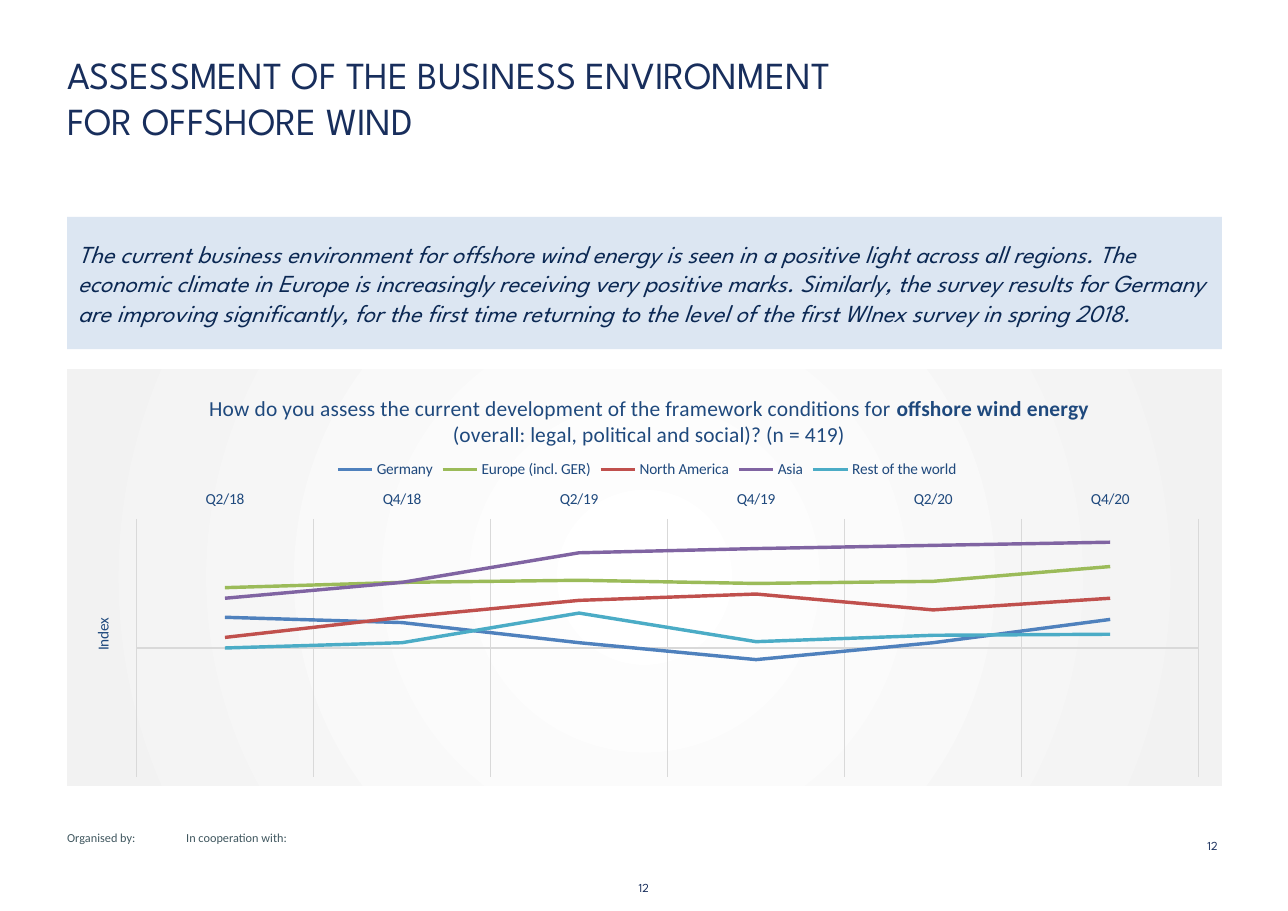
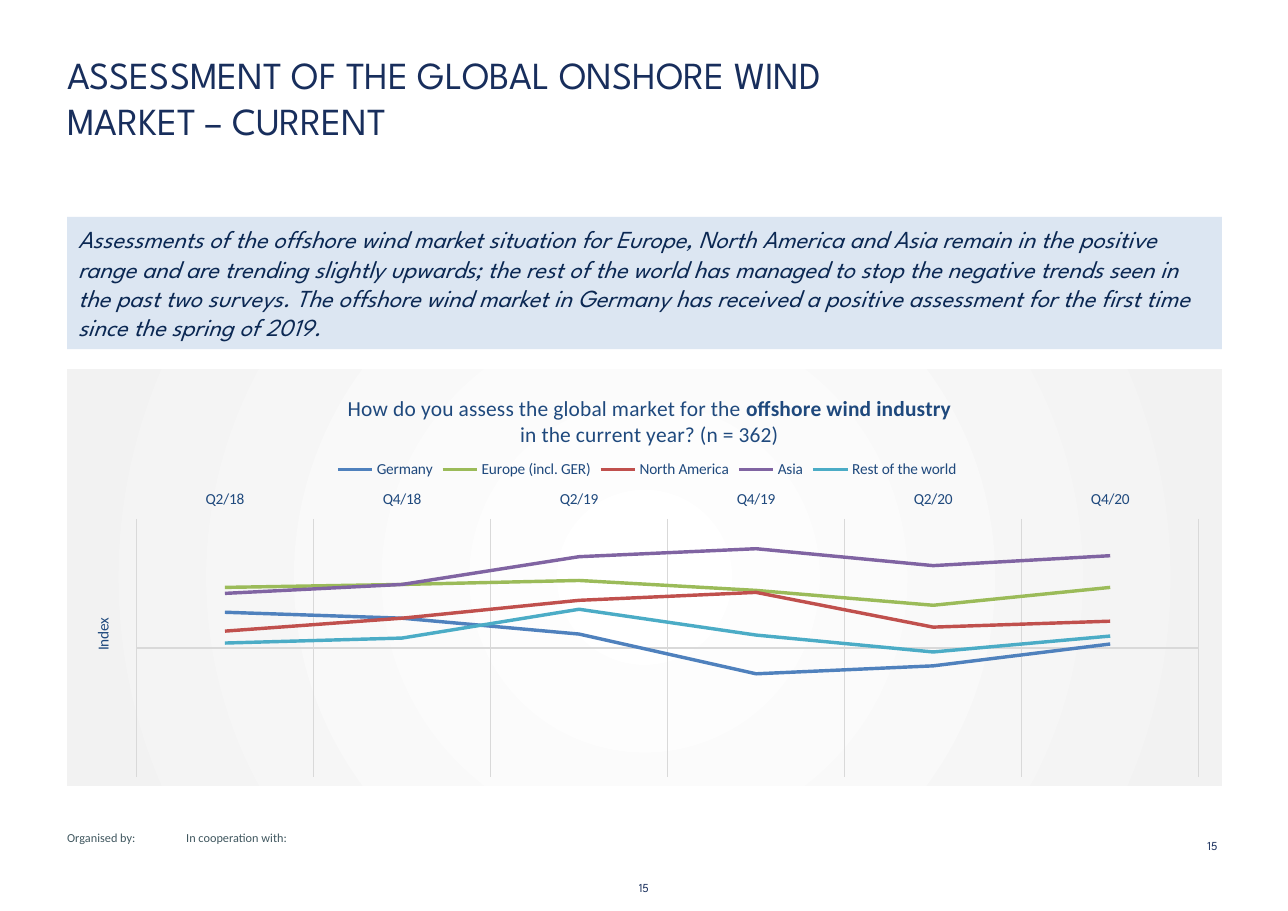
from dataclasses import dataclass

from lxml import etree
from pptx import Presentation
from pptx.chart import data as chart_data
from pptx.dml.color import RGBColor
from pptx.enum import chart as chart_enum, shapes, text
from pptx.oxml import parse_xml
from pptx.oxml.ns import nsdecls, qn
from pptx.util import Pt

COLORS = {
    "title": "182E5C",
    "banner": "DCE6F2",
    "banner_text": "0B2853",
    "footer": "40575F",
    "chart_text": "1F497D",
    "grid": "D9D9D9",
    "glow": "FFFFFF",
    "edge": "F2F2F2",
}
REGION_COLORS = {
    "Germany": "4F81BD",
    "Europe (incl. GER)": "9BBB59",
    "North America": "C0504D",
    "Asia": "8064A2",
    "Rest of the world": "4BACC6",
}
QUARTERS = ["Q2/18", "Q4/18", "Q2/19", "Q4/19", "Q2/20", "Q4/20"]
HEADING_FONT = "League Spartan"
BODY_FONT = "Calibri"
LEFT, CONTENT_WIDTH = 43.9, 754.6


@dataclass
class Style:
    size: float
    font: str
    color: str
    italic: bool = False
    bold: bool = False


@dataclass
class Box:
    left: float
    top: float
    width: float
    height: float

    def points(self) -> tuple:
        return Pt(self.left), Pt(self.top), Pt(self.width), Pt(self.height)


@dataclass
class Survey:
    page: int
    heading: str
    summary: str
    question: str
    topic: str
    question_end: str
    title_left: float
    limit: int
    values: list[list[int]]


TITLE_STYLE = Style(25, HEADING_FONT, COLORS["title"])
SUMMARY_STYLE = Style(16, HEADING_FONT, COLORS["banner_text"], italic=True)
PAGE_STYLE = Style(8, HEADING_FONT, COLORS["title"])
FOOTER_STYLE = Style(8, BODY_FONT, COLORS["footer"])
QUESTION_STYLE = Style(14, BODY_FONT, COLORS["chart_text"])
TOPIC_STYLE = Style(14, BODY_FONT, COLORS["chart_text"], bold=True)
LABEL_STYLE = Style(10, BODY_FONT, COLORS["chart_text"])

SURVEYS = [
    Survey(
        12,
        "ASSESSMENT OF THE BUSINESS ENVIRONMENT FOR OFFSHORE WIND",
        "The current business environment for offshore wind energy is seen in a positive "
        "light across all regions. The economic climate in Europe is increasingly receiving "
        "very positive marks. Similarly, the survey results for Germany are improving "
        "significantly, for the first time returning to the level of the first WInex survey "
        "in spring 2018.",
        "How do you assess the current development of the framework conditions for ",
        "offshore wind energy",
        "(overall: legal, political and social)? (n = 419)",
        0.12,
        122,
        [
            [29, 24, 5, -11, 5, 27],
            [57, 62, 64, 61, 63, 77],
            [10, 29, 45, 51, 36, 47],
            [47, 62, 90, 94, 97, 100],
            [0, 5, 33, 6, 12, 13],
        ],
    ),
    Survey(
        15,
        "ASSESSMENT OF THE GLOBAL ONSHORE WIND MARKET – CURRENT",
        "Assessments of the offshore wind market situation for Europe, North America and "
        "Asia remain in the positive range and are trending slightly upwards; the rest of "
        "the world has managed to stop the negative trends seen in the past two surveys. "
        "The offshore wind market in Germany has received a positive assessment for the "
        "first time since the spring of 2019.",
        "How do you assess the global market for the ",
        "offshore wind industry",
        "in the current year? (n = 362)",
        0.24,
        130,
        [
            [36, 30, 14, -26, -18, 4],
            [61, 64, 68, 58, 43, 61],
            [17, 30, 48, 56, 21, 27],
            [55, 64, 92, 100, 83, 93],
            [5, 10, 39, 13, -4, 12],
        ],
    ),
]


def style_font(font, style: Style) -> None:
    font.size = Pt(style.size)
    font.name = style.font
    font.bold = style.bold
    font.italic = style.italic
    font.color.rgb = RGBColor.from_string(style.color)


def add_text(slide, box: Box, content: str, style: Style, inset: bool = False,
             align=text.PP_ALIGN.LEFT) -> None:
    frame = slide.shapes.add_textbox(*box.points()).text_frame
    frame.word_wrap = True
    if not inset:
        frame.margin_left = frame.margin_right = 0
        frame.margin_top = frame.margin_bottom = 0
    frame.text = content
    frame.paragraphs[0].alignment = align
    style_font(frame.paragraphs[0].runs[0].font, style)


def add_banner(slide, content: str) -> None:
    box = Box(LEFT, 141.8, CONTENT_WIDTH, 86.4)
    shape = slide.shapes.add_shape(shapes.MSO_SHAPE.RECTANGLE, *box.points())
    shape.shadow.inherit = False
    shape.fill.solid()
    shape.fill.fore_color.rgb = RGBColor.from_string(COLORS["banner"])
    shape.line.fill.background()
    frame = shape.text_frame
    frame.word_wrap = True
    frame.vertical_anchor = text.MSO_ANCHOR.MIDDLE
    frame.text = content
    frame.paragraphs[0].alignment = text.PP_ALIGN.LEFT
    style_font(frame.paragraphs[0].runs[0].font, SUMMARY_STYLE)


def add_frame(slide, survey: Survey) -> None:
    """Add the heading, footer labels and both page numbers."""
    page = str(survey.page)
    add_text(slide, Box(LEFT, 33.8, 519, 82.8), survey.heading, TITLE_STYLE)
    add_text(slide, Box(LEFT, 542.9, 57.6, 9.4), "Organised by:", FOOTER_STYLE)
    add_text(slide, Box(121.7, 542.9, 82.8, 9.4), "In cooperation with:", FOOTER_STYLE)
    add_text(slide, Box(782, 544.3, 33, 31.7), page, PAGE_STYLE, inset=True)
    add_text(slide, Box(406.8, 575.3, 28, 13), page, PAGE_STYLE,
             align=text.PP_ALIGN.CENTER)


def place(element, **fractions: float) -> None:
    """Fix a chart part at fractions (x, y, w, h) of the chart area."""
    for layout in element.findall(qn("c:layout")):
        element.remove(layout)
    layout = parse_xml(f"<c:layout {nsdecls('c')}><c:manualLayout/></c:layout>")
    manual = layout[0]
    if "w" in fractions:
        etree.SubElement(manual, qn("c:layoutTarget")).set("val", "inner")
    for key in ("x", "y"):
        etree.SubElement(manual, qn(f"c:{key}Mode")).set("val", "edge")
    for key, value in fractions.items():
        etree.SubElement(manual, qn(f"c:{key}")).set("val", str(value))
    followers = (qn("c:overlay"), qn("c:lineChart"))
    next(child for child in element if child.tag in followers).addprevious(layout)


def fill_radially(chart) -> None:
    stops = "".join(
        f'<a:gs pos="{position}"><a:srgbClr val="{COLORS[name]}"/></a:gs>'
        for position, name in ((0, "glow"), (100000, "edge"))
    )
    properties = parse_xml(
        f"<c:spPr {nsdecls('c', 'a')}><a:gradFill><a:gsLst>{stops}</a:gsLst>"
        '<a:path path="circle"><a:fillToRect l="50000" t="50000" r="50000" b="50000"/>'
        "</a:path></a:gradFill><a:ln><a:noFill/></a:ln></c:spPr>"
    )
    chart.element.find(qn("c:txPr")).addprevious(properties)


def add_question(chart, survey: Survey) -> None:
    chart.has_title = True
    frame = chart.chart_title.text_frame
    first, second = frame.paragraphs[0], frame.add_paragraph()
    for paragraph, content, style in (
        (first, survey.question, QUESTION_STYLE),
        (first, survey.topic, TOPIC_STYLE),
        (second, survey.question_end, QUESTION_STYLE),
    ):
        run = paragraph.add_run()
        run.text = content
        style_font(run.font, style)
    place(chart.chart_title.element, x=survey.title_left, y=0.05)


def format_axes(chart, limit: int) -> None:
    quarters, index = chart.category_axis, chart.value_axis
    quarters.has_major_gridlines = True
    quarters.tick_label_position = chart_enum.XL_TICK_LABEL_POSITION.HIGH
    style_font(quarters.tick_labels.font, LABEL_STYLE)
    for line in (quarters.format.line, quarters.major_gridlines.format.line):
        line.color.rgb = RGBColor.from_string(COLORS["grid"])
        line.width = Pt(0.75)

    index.minimum_scale, index.maximum_scale = -limit, limit
    index.has_major_gridlines = False
    index.tick_label_position = chart_enum.XL_TICK_LABEL_POSITION.NONE
    index.format.line.fill.background()
    for axis in (quarters, index):
        axis.major_tick_mark = axis.minor_tick_mark = chart_enum.XL_TICK_MARK.NONE

    frame = index.axis_title.text_frame
    frame.text = "Index"
    style_font(frame.paragraphs[0].runs[0].font, LABEL_STYLE)
    body = index.axis_title.element.find(".//" + qn("a:bodyPr"))
    body.set("rot", "-5400000")
    body.set("vert", "horz")
    place(index.axis_title.element, x=0.02, y=0.59)


def add_index_chart(slide, survey: Survey) -> None:
    data = chart_data.CategoryChartData()
    data.categories = QUARTERS
    for region, values in zip(REGION_COLORS, survey.values):
        data.add_series(region, values)
    box = Box(LEFT, 241.2, CONTENT_WIDTH, 272.2)
    chart = slide.shapes.add_chart(
        chart_enum.XL_CHART_TYPE.LINE, *box.points(), data
    ).chart
    style_font(chart.font, LABEL_STYLE)
    fill_radially(chart)
    add_question(chart, survey)
    format_axes(chart, survey.limit)

    chart.has_legend = True
    chart.legend.position = chart_enum.XL_LEGEND_POSITION.TOP
    chart.legend.include_in_layout = False
    style_font(chart.legend.font, LABEL_STYLE)
    place(chart.element.find(".//" + qn("c:legend")), x=0.23, y=0.21)
    place(chart.element.find(".//" + qn("c:plotArea")), x=0.06, y=0.36, w=0.92, h=0.62)

    chart.plots[0].vary_by_categories = False
    for series, color in zip(chart.plots[0].series, REGION_COLORS.values()):
        series.smooth = False
        series.marker.style = chart_enum.XL_MARKER_STYLE.NONE
        series.format.line.color.rgb = RGBColor.from_string(color)
        series.format.line.width = Pt(2.25)


def main() -> None:
    presentation = Presentation()
    presentation.slide_width, presentation.slide_height = Pt(841.7), Pt(595.4)
    for survey in SURVEYS:
        slide = presentation.slides.add_slide(presentation.slide_layouts[6])
        add_frame(slide, survey)
        add_banner(slide, survey.summary)
        add_index_chart(slide, survey)
    presentation.save("out.pptx")


if __name__ == "__main__":
    main()
